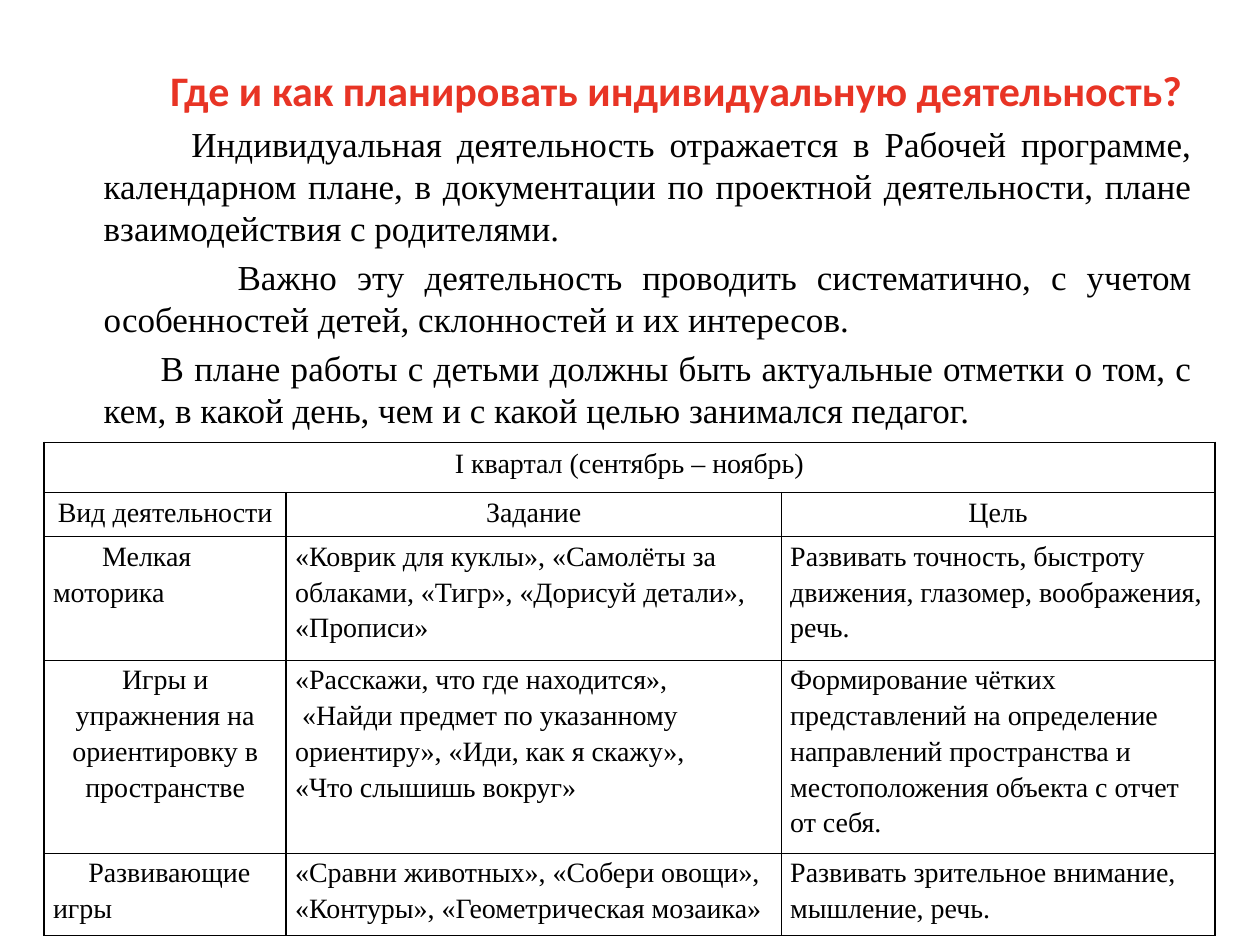
from lxml.etree import SubElement
from pptx import Presentation
from pptx.dml.color import RGBColor
from pptx.enum.text import MSO_ANCHOR, PP_ALIGN
from pptx.oxml.ns import qn
from pptx.util import Cm, Pt

COLORS = {"title": "E83425", "text": "000000", "border": "000000", "paper": "FFFFFF"}
SERIF = "Times New Roman"

BODY = [
    ("Индивидуальная деятельность отражается в Рабочей программе, календарном плане, "
     "в документации по проектной деятельности, плане взаимодействия с родителями.", 1.77),
    ("Важно эту деятельность проводить систематично, с учетом особенностей детей, "
     "склонностей и их интересов.", 2.7),
    ("В плане работы с детьми должны быть актуальные отметки о том, с кем, в какой день, "
     "чем и с какой целью занимался педагог.", 1.15),
]

QUARTER = "I квартал (сентябрь – ноябрь)"
HEADINGS = ["Вид деятельности", "Задание", "Цель"]
ACTIVITIES = [
    [
        [("Мелкая моторика", 0.99)],
        ["«Коврик для куклы», «Самолёты за облаками, «Тигр», «Дорисуй детали», «Прописи»"],
        ["Развивать точность, быстроту движения, глазомер, воображения, речь."],
    ],
    [
        ["Игры и упражнения на ориентировку в пространстве"],
        ["«Расскажи, что где находится»,",
         ("«Найди предмет по указанному ориентиру», «Иди, как я скажу»,", 0.14),
         "«Что слышишь вокруг»"],
        ["Формирование чётких представлений на определение направлений пространства "
         "и местоположения объекта с отчет от себя."],
    ],
    [
        [("Развивающие игры", 0.71)],
        ["«Сравни животных», «Собери овощи»,", "«Контуры», «Геометрическая мозаика»"],
        ["Развивать зрительное внимание, мышление, речь."],
    ],
]
CENTERED_ACTIVITY = 1
COLUMN_WIDTHS = [4.88, 9.98, 8.74]
ROW_HEIGHTS = [1.01, 0.89, 2.49, 3.61, 1.66]


def write(frame, items, size, font=SERIF, color="text", bold=False,
          align=PP_ALIGN.LEFT, spacing=None, gap=0, margin=0):
    frame.word_wrap = True
    for index, item in enumerate(items):
        words, indent = item if isinstance(item, tuple) else (item, 0)
        paragraph = frame.add_paragraph() if index else frame.paragraphs[0]
        properties = paragraph._p.get_or_add_pPr()
        properties.set("marL", str(Cm(margin)))
        properties.set("indent", str(Cm(indent)))
        paragraph.alignment = align
        if spacing:
            paragraph.line_spacing = spacing
        if index and gap:
            paragraph.space_before = Pt(gap)
        run = paragraph.add_run()
        run.text = words
        run.font.name = font
        run.font.size = Pt(size)
        run.font.bold = bold
        run.font.color.rgb = RGBColor.from_string(COLORS[color])


def add_title(slide, left, top, width, height):
    title = slide.shapes.add_textbox(Cm(left), Cm(top), Cm(width), Cm(height))
    title.text_frame.vertical_anchor = MSO_ANCHOR.MIDDLE
    write(title.text_frame, ["Где и как планировать индивидуальную деятельность?"], 24,
          font="Calibri", color="title", bold=True, align=PP_ALIGN.CENTER)


def add_body(slide, left, top, width, height):
    body = slide.shapes.add_textbox(Cm(left), Cm(top), Cm(width), Cm(height))
    write(body.text_frame, BODY, 20, align=PP_ALIGN.JUSTIFY, gap=4, margin=0.95)


def draw_borders(cell):
    properties = cell._tc.get_or_add_tcPr()
    for position, side in enumerate(("lnL", "lnR", "lnT", "lnB")):
        line = properties.makeelement(qn(f"a:{side}"), {"w": str(Pt(1))})
        fill = SubElement(line, qn("a:solidFill"))
        SubElement(fill, qn("a:srgbClr"), val=COLORS["border"])
        properties.insert(position, line)


def add_plan(slide, left, top):
    plan = slide.shapes.add_table(
        len(ROW_HEIGHTS), len(COLUMN_WIDTHS), Cm(left), Cm(top),
        Cm(sum(COLUMN_WIDTHS)), Cm(sum(ROW_HEIGHTS))).table
    plan.first_row = plan.horz_banding = False
    for column, width in zip(plan.columns, COLUMN_WIDTHS):
        column.width = Cm(width)
    for row, height in zip(plan.rows, ROW_HEIGHTS):
        row.height = Cm(height)
    for cell in plan.iter_cells():
        cell.fill.solid()
        cell.fill.fore_color.rgb = RGBColor.from_string(COLORS["paper"])
        draw_borders(cell)

    quarter = plan.cell(0, 0)
    quarter.merge(plan.cell(0, len(COLUMN_WIDTHS) - 1))
    write(quarter.text_frame, [QUARTER], 16, align=PP_ALIGN.CENTER)

    rows = [[[heading] for heading in HEADINGS]] + ACTIVITIES
    for row, entries in enumerate(rows, start=1):
        for column, entry in enumerate(entries):
            cell = plan.cell(row, column)
            cell.margin_left = cell.margin_right = Cm(0.18)
            cell.margin_top = cell.margin_bottom = 0
            centered = row == 1 or (row == CENTERED_ACTIVITY + 2 and column == 0)
            write(cell.text_frame, entry, 16, spacing=1.15,
                  align=PP_ALIGN.CENTER if centered else PP_ALIGN.LEFT)


def main():
    presentation = Presentation()
    presentation.slide_width = Cm(25.4)
    presentation.slide_height = Cm(19.05)
    slide = presentation.slides.add_slide(presentation.slide_layouts[6])
    add_title(slide, 2.36, 0.91, 22.55, 1.8)
    add_body(slide, 0.89, 2.34, 23.39, 15.8)
    add_plan(slide, 0.89, 8.92)
    presentation.save("out.pptx")


if __name__ == "__main__":
    main()
